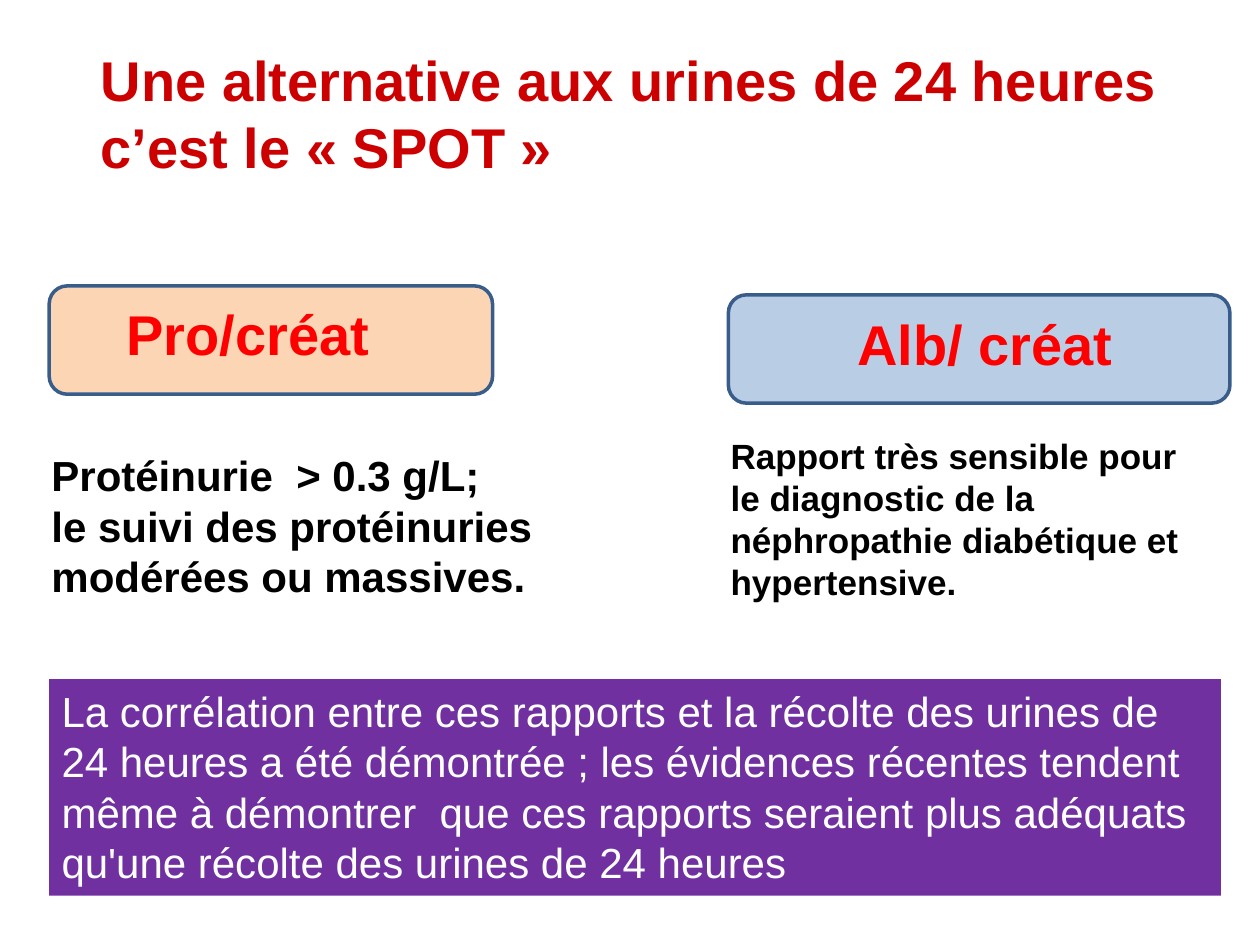
from pptx import Presentation
from pptx.dml.color import RGBColor
from pptx.enum.shapes import MSO_SHAPE
from pptx.enum.text import MSO_ANCHOR, MSO_AUTO_SIZE, PP_ALIGN
from pptx.util import Pt

ROUNDED = MSO_SHAPE.ROUNDED_RECTANGLE
RECTANGLE = MSO_SHAPE.RECTANGLE
TOP = MSO_ANCHOR.TOP
LEFT = PP_ALIGN.LEFT
GROW = MSO_AUTO_SIZE.SHAPE_TO_FIT_TEXT
TITLE_ONLY = 5
FONT = "Arial"
COLORS = {
    "title": "CC0000",
    "label": "FF0000",
    "body": "000000",
    "peach": "FCD5B5",
    "blue": "B9CDE5",
    "outline": "385D8A",
    "purple": "7030A0",
    "white": "FFFFFF",
}


def color(name):
    return RGBColor.from_string(COLORS[name])


def place(shape, box):
    shape.left, shape.top, shape.width, shape.height = (Pt(length) for length in box)


def write(shape, text, size, color_name, bold=True, indent=0):
    frame = shape.text_frame
    frame.word_wrap = True
    frame.auto_size = GROW
    frame.vertical_anchor = TOP
    frame.margin_left = Pt(7.2 + indent)
    frame.margin_right = Pt(7.2)
    frame.margin_top = frame.margin_bottom = Pt(3.6)
    frame.text = text
    paragraph = frame.paragraphs[0]
    paragraph.alignment = LEFT
    paragraph.font.name = FONT
    paragraph.font.size = Pt(size)
    paragraph.font.bold = bold
    paragraph.font.color.rgb = color(color_name)


def add_panel(slide, kind, box, fill_name):
    panel = slide.shapes.add_shape(kind, *(Pt(length) for length in box))
    panel.shadow.inherit = False
    panel.fill.solid()
    panel.fill.fore_color.rgb = color(fill_name)
    panel.line.fill.background()
    return panel


def add_text(slide, box, text, size, color_name, indent=0):
    text_box = slide.shapes.add_textbox(*(Pt(length) for length in box))
    write(text_box, text, size, color_name, indent=indent)


def add_title(slide, box):
    title = slide.shapes.title
    place(title, box)
    write(title, "Une alternative aux urines de 24 heures c’est le « SPOT »", 32, "title")


def add_ratio(slide, box, fill_name, label, label_box, indent, text, text_box, size):
    panel = add_panel(slide, ROUNDED, box, fill_name)
    panel.line.color.rgb = color("outline")
    panel.line.width = Pt(2)
    add_text(slide, label_box, label, 32, "label", indent)
    add_text(slide, text_box, text, size, "body")


def add_conclusion(slide, box):
    panel = add_panel(slide, RECTANGLE, box, "purple")
    write(
        panel,
        "La corrélation entre ces rapports et la récolte des urines de 24 heures "
        "a été démontrée ; les évidences récentes tendent même à démontrer  que "
        "ces rapports seraient plus adéquats qu'une récolte des urines de 24 heures",
        24, "white", bold=False,
    )


def main():
    presentation = Presentation()
    presentation.slide_width = Pt(720)
    presentation.slide_height = Pt(540)
    slide = presentation.slides.add_slide(presentation.slide_layouts[TITLE_ONLY])
    add_title(slide, (50.4, 22.3, 635.8, 85))
    add_ratio(
        slide, (416.2, 168.5, 286.6, 61.9), "blue",
        "Alb/ créat", (447.1, 173.5, 247.7, 46.1), 35.6,
        "Rapport très sensible pour le diagnostic de la néphropathie diabétique "
        "et hypertensive.",
        (410.4, 244.8, 281.5, 104.4), 20,
    )
    add_ratio(
        slide, (28.1, 163.4, 253.4, 61.9), "peach",
        "Pro/créat", (56.2, 167.8, 230.4, 46.1), 8.9,
        "Protéinurie  > 0.3 g/L;\vle suivi des protéinuries modérées ou massives.",
        (22.3, 253.4, 303.8, 94.3), 24,
    )
    add_conclusion(slide, (28.1, 388.1, 669.6, 123.8))
    presentation.save("out.pptx")


if __name__ == "__main__":
    main()
